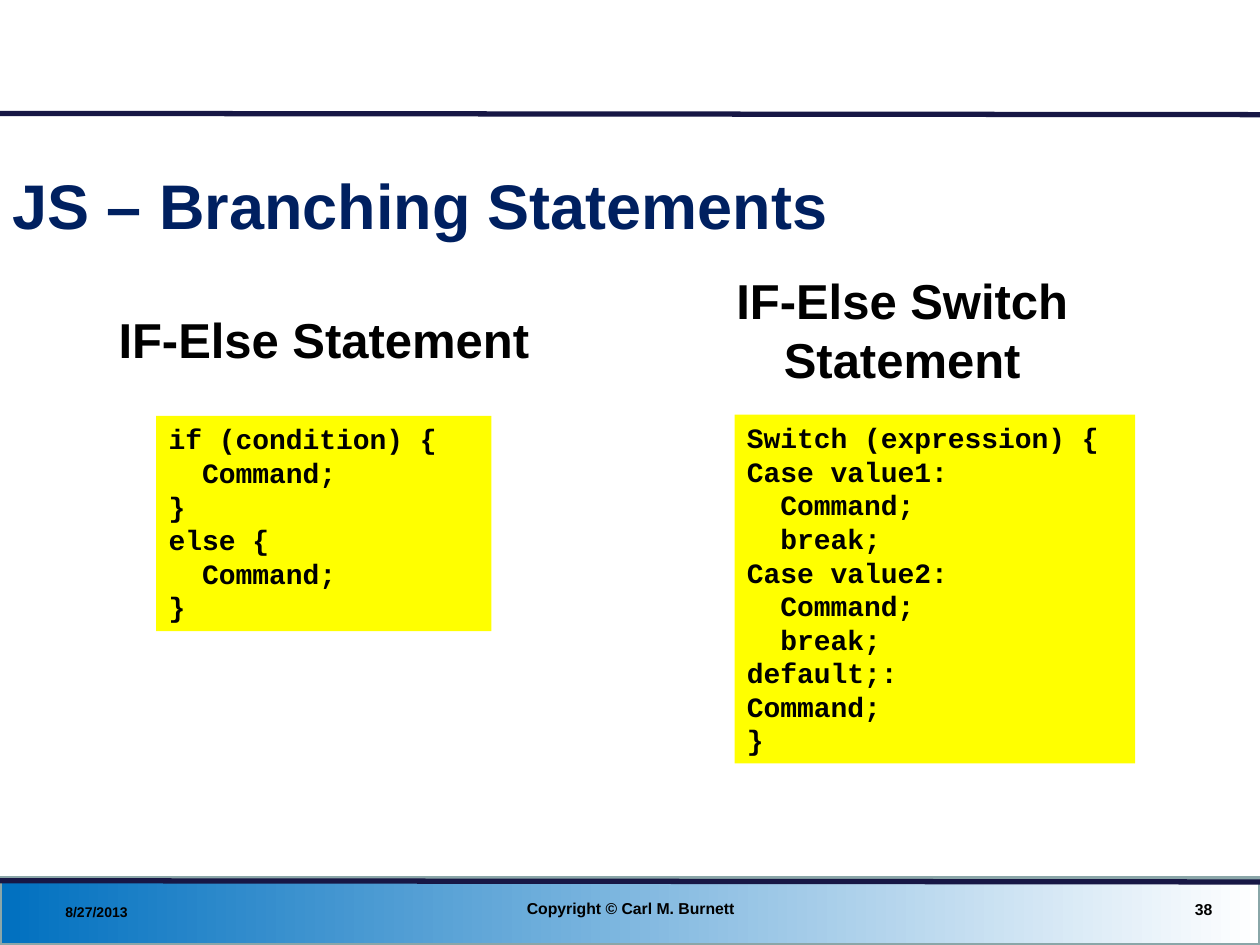
from dataclasses import dataclass

from lxml import etree
from pptx import Presentation
from pptx.dml.color import RGBColor
from pptx.enum.shapes import MSO_CONNECTOR, MSO_SHAPE
from pptx.enum.text import MSO_ANCHOR, PP_ALIGN
from pptx.oxml.ns import qn
from pptx.util import Inches, Pt

LEFT, CENTER, RIGHT = PP_ALIGN.LEFT, PP_ALIGN.CENTER, PP_ALIGN.RIGHT
TOP, MIDDLE = MSO_ANCHOR.TOP, MSO_ANCHOR.MIDDLE
RECTANGLE = MSO_SHAPE.RECTANGLE
STRAIGHT = MSO_CONNECTOR.STRAIGHT


@dataclass(frozen=True)
class Theme:
    """Colours, fonts and type sizes of the slide."""
    title: RGBColor = RGBColor(0x00, 0x20, 0x60)
    ink: RGBColor = RGBColor(0x00, 0x00, 0x00)
    code_fill: RGBColor = RGBColor(0xFF, 0xFF, 0x00)
    rule: RGBColor = RGBColor(0x17, 0x17, 0x45)
    band_start: RGBColor = RGBColor(0x00, 0x70, 0xC0)
    band_end: RGBColor = RGBColor(0xFF, 0xFF, 0xFF)
    band_line: RGBColor = RGBColor(0x8A, 0xA6, 0xA8)
    sans: str = "Arial"
    mono: str = "Courier New"
    title_size: int = 36
    heading_size: int = 28
    code_size: int = 16
    footer_size: int = 9
    date_size: int = 8


THEME = Theme()

IF_ELSE = """if (condition) {
  Command;
}
else {
  Command;
}"""

SWITCH = """Switch (expression) {
Case value1:
  Command;
  break;
Case value2:
  Command;
  break;
default;:\vCommand;
}"""


def write(shape, text, size, font=THEME.sans, color=THEME.ink, align=LEFT, anchor=TOP):
    """Fill a shape with bold text in one style."""
    frame = shape.text_frame
    frame.word_wrap = True
    frame.vertical_anchor = anchor
    frame.text = text
    for paragraph in frame.paragraphs:
        paragraph.alignment = align
        for run in paragraph.runs:
            run.font.name = font
            run.font.size = Pt(size)
            run.font.bold = True
            run.font.color.rgb = color


def add_label(slide, box, text, size, **style):
    """Add a text box in the given box."""
    label = slide.shapes.add_textbox(*map(Inches, box))
    write(label, text, size, **style)


def add_rule(slide, box):
    """Draw a dark rule from the top left to the bottom right of the box."""
    left, top, width, height = box
    ends = (left, top, left + width, top + height)
    rule = slide.shapes.add_connector(STRAIGHT, *map(Inches, ends))
    rule.line.color.rgb = THEME.rule
    rule.line.width = Pt(3)
    etree.SubElement(rule._element.spPr, qn("a:effectLst"))


def add_footer(slide, box):
    """Draw the gradient band with the date, copyright and slide number."""
    left, top, width, _ = box
    band = slide.shapes.add_shape(RECTANGLE, *map(Inches, box))
    band.shadow.inherit = False
    band.fill.gradient()
    band.fill.gradient_angle = 0
    for stop, color in zip(band.fill.gradient_stops, (THEME.band_start, THEME.band_end)):
        stop.color.rgb = color
    band.line.color.rgb = THEME.band_line
    band.line.width = Pt(2)
    add_rule(slide, (left, top + 0.02, width, 0.01))
    add_label(slide, (left + 0.42, top + 0.13, 2.33, 0.27), "8/27/2013",
              THEME.date_size, anchor=MIDDLE)
    add_label(slide, (left + 3.42, top + 0.09, 3.17, 0.29), "Copyright © Carl M. Burnett",
              THEME.footer_size, align=CENTER, anchor=MIDDLE)
    add_label(slide, (left + 7.39, top + 0.1, 2.33, 0.29), "38",
              THEME.footer_size, align=RIGHT, anchor=MIDDLE)


def add_statement(slide, heading_box, heading, code_box, code):
    """Place a centred heading and its code panel."""
    add_label(slide, heading_box, heading, THEME.heading_size, align=CENTER)
    panel = slide.shapes.add_shape(RECTANGLE, *map(Inches, code_box))
    panel.shadow.inherit = False
    panel.fill.solid()
    panel.fill.fore_color.rgb = THEME.code_fill
    panel.line.fill.background()
    write(panel, code, THEME.code_size, font=THEME.mono)


def main():
    """Build and save the slide."""
    deck = Presentation()
    deck.slide_width, deck.slide_height = Inches(10), Inches(7.5)
    slide = deck.slides.add_slide(deck.slide_layouts[6])
    add_footer(slide, (0, 6.97, 10, 0.53))
    add_rule(slide, (0, 0.9, 10, 0.01))
    add_label(slide, (0, 1.14, 9.58, 0.97), "JS – Branching Statements",
              THEME.title_size, color=THEME.title, anchor=MIDDLE)
    add_statement(slide, (0.7, 2.41, 3.74, 0.56), "IF-Else Statement",
                  (1.24, 3.3, 2.66, 1.71), IF_ELSE)
    add_statement(slide, (4.85, 2.1, 4.62, 1.02), "IF-Else Switch Statement",
                  (5.83, 3.29, 3.18, 2.77), SWITCH)
    deck.save("out.pptx")


if __name__ == "__main__":
    main()
